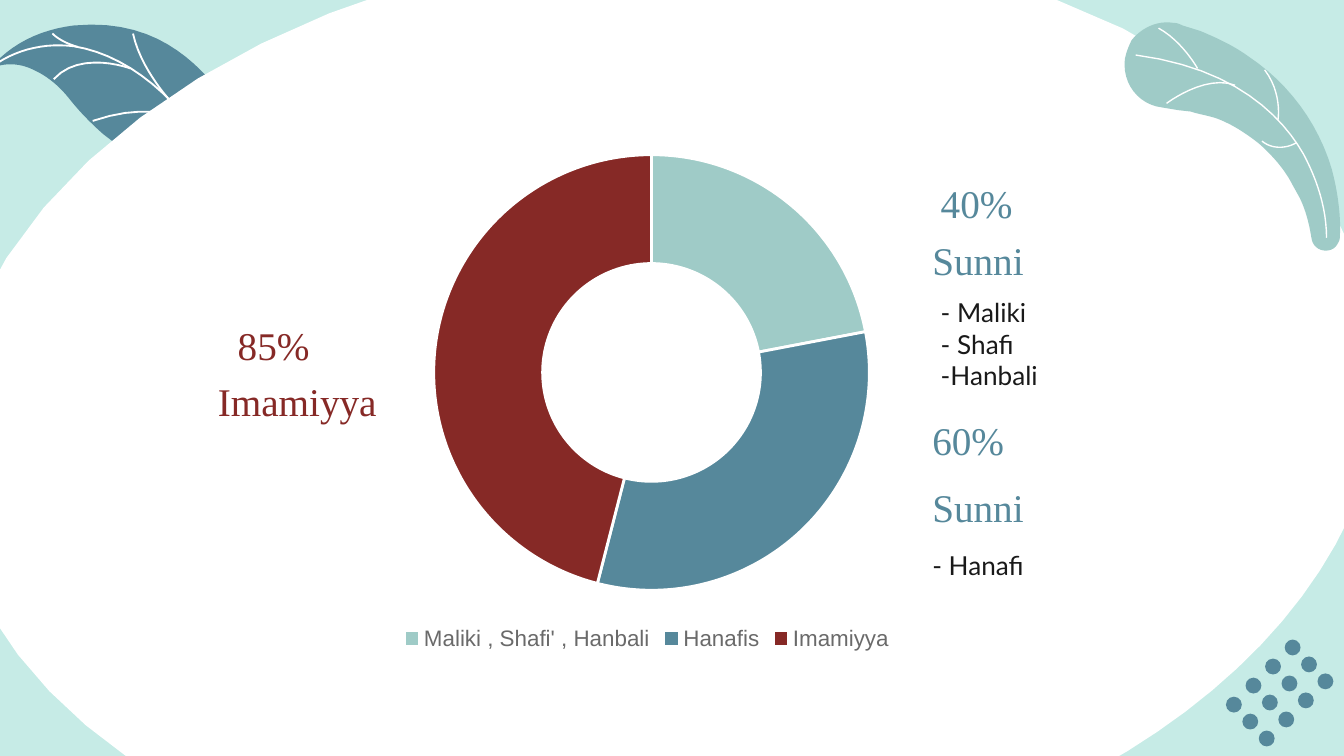
from dataclasses import dataclass

from lxml import etree
from pptx import Presentation
from pptx.chart.data import CategoryChartData
from pptx.dml.color import RGBColor
from pptx.enum.chart import XL_CHART_TYPE, XL_LEGEND_POSITION
from pptx.enum.shapes import MSO_SHAPE
from pptx.enum.text import MSO_ANCHOR, PP_ALIGN
from pptx.oxml.ns import qn
from pptx.util import Cm, Pt

LEFT, RIGHT = PP_ALIGN.LEFT, PP_ALIGN.RIGHT
TOP, BOTTOM = MSO_ANCHOR.TOP, MSO_ANCHOR.BOTTOM
DOUGHNUT = XL_CHART_TYPE.DOUGHNUT
LEGEND_BOTTOM = XL_LEGEND_POSITION.BOTTOM
OVAL = MSO_SHAPE.OVAL

COLORS = {
    "mint": "C6EBE6",
    "sage": "9FCBC7",
    "blue": "56889B",
    "red": "862926",
    "white": "FFFFFF",
    "ink": "191919",
    "grey": "6A6A6A",
}
GRID = 2.54  # centimetres per unit of the outline coordinates
CURVE_STEPS = 12


@dataclass
class Outline:
    """A start point, then segments: (x, y) is a line, six numbers a Bezier curve."""
    start: tuple
    segments: list
    color: str
    vein_width: float = 0  # points; zero means a closed, filled shape


@dataclass
class Label:
    lines: list
    box: tuple  # left, top, width, height in cm
    style: str
    color: str
    align: PP_ALIGN = LEFT


TEXT_STYLES = {
    "heading": ({"name": "Times New Roman", "size": Pt(21)}, BOTTOM),
    "detail": ({"name": "Lato", "size": Pt(14)}, TOP),
}

LEFT_LEAF = [
    Outline((1.65, 0.84), [
        (1.66, 0.75, 1.63, 0.66, 1.54, 0.57), (1.36, 0.38, 1.07, 0.14, 0.55, 0.19),
        (0.3, 0.22, 0.07, 0.33, -0.08, 0.52), (0.02, 0.46, 0.15, 0.47, 0.25, 0.52),
        (0.36, 0.57, 0.45, 0.65, 0.52, 0.74), (0.6, 0.84, 0.68, 0.92, 0.77, 1),
        (1.15, 1.34, 1.63, 1.13, 1.65, 0.84)], "blue"),
    Outline((-0.02, 0.47), [(0.15, 0.36, 0.35, 0.32, 0.55, 0.345),
                            (0.89, 0.4, 1.22, 0.63, 1.53, 1.06)], "white", 1),
    Outline((0.69, 0.9), [(1.22, 0.72, 1.45, 0.95, 1.45, 0.95)], "white", 1),
    Outline((0.99, 0.25), [(1.04, 0.49, 1.24, 0.72, 1.25, 0.73)], "white", 1),
    Outline((0.4, 0.59), [(0.6, 0.37, 0.97, 0.51, 0.97, 0.51)], "white", 1),
    Outline((0.39, 0.25), [(0.46, 0.32, 0.58, 0.35, 0.58, 0.35)], "white", 1),
]

CENTRE_OVAL = Outline((5.33, -0.44), [
    (2.89, -0.44, 0.57, 0.68, -0.17, 2.32), (-0.79, 3.68, -0.15, 5.03, 1.29, 5.85),
    (1.47, 5.94), (7.73, 5.94), (7.92, 5.85),
    (8.9, 5.36, 9.66, 4.67, 10.04, 3.85), (10.9, 1.95, 9.31, 0.07, 6.49, -0.36),
    (6.1, -0.41, 5.72, -0.44, 5.33, -0.44)], "white")

RIGHT_LEAF = [
    Outline((8.42, 0.3), [
        (8.4, 0.34, 8.38, 0.39, 8.37, 0.44), (8.35, 0.62, 8.47, 0.78, 8.65, 0.8),
        (8.77, 0.82), (8.86, 0.83),
        (8.92, 0.85, 8.99, 0.86, 9.05, 0.88), (9.16, 0.92, 9.27, 0.99, 9.37, 1.07),
        (9.47, 1.16, 9.56, 1.26, 9.62, 1.38), (9.67, 1.47),
        (9.71, 1.55, 9.74, 1.65, 9.76, 1.78), (9.78, 1.88, 9.91, 1.89, 9.95, 1.82),
        (9.96, 1.8, 9.97, 1.79, 9.97, 1.76), (9.98, 1.6, 9.95, 1.41, 9.91, 1.26),
        (9.81, 0.92, 9.59, 0.62, 9.29, 0.42), (9.18, 0.34, 9.05, 0.28, 8.93, 0.23),
        (8.8, 0.19), (8.78, 0.18, 8.76, 0.17, 8.73, 0.17),
        (8.61, 0.15, 8.49, 0.21, 8.42, 0.3)], "sage"),
    Outline((8.45, 0.41), [(9.2, 0.51, 9.54, 0.87, 9.7, 1.15),
                           (9.8, 1.34, 9.87, 1.55, 9.87, 1.77)], "white", 0.75),
    Outline((8.68, 0.77), [(8.68, 0.77, 8.97, 0.55, 9.19, 0.635)], "white", 0.75),
    Outline((8.62, 0.21), [(8.8, 0.31, 8.91, 0.51, 8.91, 0.51)], "white", 0.75),
    Outline((9.41, 0.52), [(9.54, 0.69, 9.51, 0.88, 9.51, 0.89)], "white", 0.75),
    Outline((9.39, 1.05), [(9.46, 1.11, 9.57, 1.11, 9.65, 1.06)], "white", 0.75),
]

LABELS = [
    Label(["40%"], (17.53, 3.05, 6.05, 1.47), "heading", "blue"),
    Label(["Sunni"], (17.37, 4.14, 6.05, 1.47), "heading", "blue"),
    Label(["- Maliki", "- Shafi", "-Hanbali"], (17.53, 5.36, 3.53, 2.29), "detail", "ink"),
    Label(["60%"], (17.37, 7.54, 6.05, 1.47), "heading", "blue"),
    Label(["Sunni"], (17.37, 8.81, 6.05, 1.47), "heading", "blue"),
    Label(["- Hanafi"], (17.37, 10.13, 3.28, 1.32), "detail", "ink"),
    Label(["85%"], (0.05, 5.74, 6.05, 1.47), "heading", "red", RIGHT),
    Label(["Imamiyya"], (1.32, 6.81, 6.05, 1.47), "heading", "red", RIGHT),
]

SHARES = {"Maliki , Shafi' , Hanbali": (22, "sage"), "Hanafis": (32, "blue"),
          "Imamiyya": (46, "red")}
PLOT_AREA = {"x": 0.26, "y": 0.16, "w": 0.49, "h": 0.73}


def rgb(name: str) -> RGBColor:
    return RGBColor.from_string(COLORS[name])


def apply_format(target, values: dict) -> None:
    for attribute, value in values.items():
        setattr(target, attribute, value)


def fill_solid(shape, color: str) -> None:
    shape.shadow.inherit = False
    shape.fill.solid()
    shape.fill.fore_color.rgb = rgb(color)
    shape.line.fill.background()


def trace(outline: Outline) -> list:
    """Return the points after the start, with curves sampled evenly."""
    points = [outline.start]
    for segment in outline.segments:
        if len(segment) == 2:
            points.append(segment)
            continue
        corners = [points[-1], segment[:2], segment[2:4], segment[4:]]
        for step in range(1, CURVE_STEPS + 1):
            t = step / CURVE_STEPS
            weights = ((1 - t) ** 3, 3 * t * (1 - t) ** 2, 3 * t * t * (1 - t), t ** 3)
            points.append(tuple(sum(weight * corner[axis] for weight, corner
                                    in zip(weights, corners)) for axis in (0, 1)))
    return points[1:]


def draw_outline(slide, outline: Outline) -> None:
    start, *points = [tuple(Cm(GRID * value) for value in point)
                      for point in [outline.start, *trace(outline)]]
    builder = slide.shapes.build_freeform(*start)
    builder.add_line_segments(points, close=not outline.vein_width)
    shape = builder.convert_to_shape()
    fill_solid(shape, outline.color)
    if outline.vein_width:
        shape.fill.background()
        shape.line.color.rgb = rgb(outline.color)
        shape.line.width = Pt(outline.vein_width)


def draw_label(slide, label: Label) -> None:
    font_values, anchor = TEXT_STYLES[label.style]
    frame = slide.shapes.add_textbox(*map(Cm, label.box)).text_frame
    margins = {f"margin_{side}": Cm(0.25) for side in ("left", "top", "right", "bottom")}
    apply_format(frame, {"word_wrap": True, "vertical_anchor": anchor, **margins})
    frame.text = "\n".join(label.lines)
    for paragraph in frame.paragraphs:
        paragraph.alignment = label.align
        font = paragraph.runs[0].font
        apply_format(font, font_values)
        font.color.rgb = rgb(label.color)


def draw_dots(slide, columns: int = 4, rows: int = 3) -> None:
    for column in range(columns):
        for row in range(rows):
            left = 24.28 - 0.37 * column + 0.31 * row
            top = 12.09 + 0.36 * column + 0.32 * row
            dot = slide.shapes.add_shape(OVAL, Cm(left), Cm(top), Cm(0.3), Cm(0.3))
            fill_solid(dot, "blue")


def draw_chart(slide) -> None:
    data = CategoryChartData()
    data.categories = list(SHARES)
    data.add_series("Share", [value for value, _ in SHARES.values()])
    chart = slide.shapes.add_chart(
        DOUGHNUT, Cm(3.76), Cm(1.12), Cm(16.94), Cm(11.28), data).chart
    apply_format(chart, {"has_title": False, "has_legend": True})
    apply_format(chart.font, {"name": "Arial", "size": Pt(10)})
    chart.font.color.rgb = rgb("ink")
    apply_format(chart.legend, {"position": LEGEND_BOTTOM, "include_in_layout": False})
    apply_format(chart.legend.font, {"name": "Arial", "size": Pt(12)})
    chart.legend.font.color.rgb = rgb("grey")

    plot = chart.plots[0]
    plot.vary_by_categories = True
    for index, (_, color) in enumerate(SHARES.values()):
        point_format = plot.series[0].points[index].format
        point_format.fill.solid()
        point_format.fill.fore_color.rgb = rgb(color)
        point_format.line.color.rgb = rgb("white")
        point_format.line.width = Pt(1.5)

    # Ring hole and fixed plot area
    plot_area = chart.element.find(".//" + qn("c:plotArea"))
    plot_area.find(".//" + qn("c:holeSize")).set("val", "75")
    layout = plot_area.find(qn("c:layout"))
    if layout is None:
        layout = etree.Element(qn("c:layout"))
        plot_area.insert(0, layout)
    manual = etree.SubElement(layout, qn("c:manualLayout"))
    settings = {"layoutTarget": "inner", "xMode": "edge", "yMode": "edge", **PLOT_AREA}
    for tag, value in settings.items():
        etree.SubElement(manual, qn(f"c:{tag}")).set("val", str(value))


def main() -> None:
    presentation = Presentation()
    apply_format(presentation, {"slide_width": Cm(25.4), "slide_height": Cm(14.29)})
    slide = presentation.slides.add_slide(presentation.slide_layouts[6])
    slide.background.fill.solid()
    slide.background.fill.fore_color.rgb = rgb("mint")

    # Backdrop: the oval covers part of the left leaf
    for outline in [*LEFT_LEAF, CENTRE_OVAL, *RIGHT_LEAF]:
        draw_outline(slide, outline)
    draw_dots(slide)

    # Content
    draw_chart(slide)
    for label in LABELS:
        draw_label(slide, label)
    presentation.save("out.pptx")


if __name__ == "__main__":
    main()
